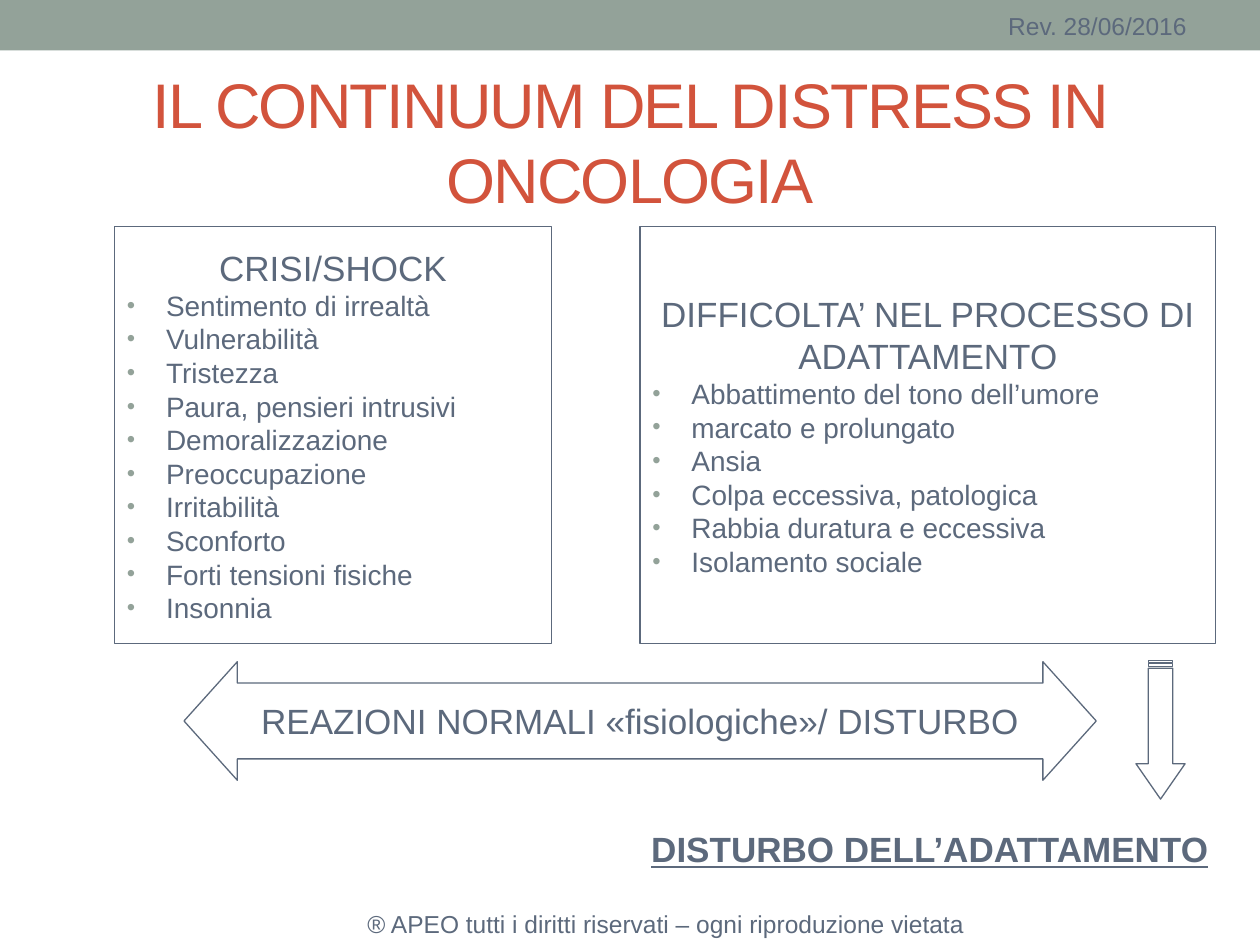
from lxml.etree import SubElement
from pptx import Presentation
from pptx.dml.color import RGBColor
from pptx.enum.shapes import MSO_SHAPE
from pptx.enum.text import MSO_ANCHOR, MSO_AUTO_SIZE, PP_ALIGN
from pptx.oxml.ns import qn
from pptx.util import Cm, Pt

SLATE = RGBColor(0x5C, 0x69, 0x7C)
SAGE = RGBColor(0x93, 0xA2, 0x99)
RED = RGBColor(0xD2, 0x53, 0x3C)


def write_paragraph(paragraph, text, size, color=SLATE, align=PP_ALIGN.CENTER, **extra):
    paragraph.alignment = align
    run = paragraph.add_run()
    run.text = text
    run.font.color.rgb = color
    for name, value in {"name": "Arial", "size": Pt(size), **extra}.items():
        setattr(run.font, name, value)
    return run


def add_outline(kind, left, top, width, height):
    shape = slide.shapes.add_shape(kind, Cm(left), Cm(top), Cm(width), Cm(height))
    shape.shadow.inherit = False
    shape.fill.background()
    shape.line.color.rgb = SLATE
    shape.line.width = Pt(0.75)
    shape.text_frame.vertical_anchor = MSO_ANCHOR.MIDDLE
    return shape


presentation = Presentation()
presentation.slide_width = Cm(25.4)
presentation.slide_height = Cm(19.05)
slide = presentation.slides.add_slide(presentation.slide_layouts[5])

band = slide.shapes.add_shape(MSO_SHAPE.RECTANGLE, Cm(0), Cm(0), Cm(25.4), Cm(1.02))
band.shadow.inherit = False
band.fill.solid()
band.fill.fore_color.rgb = SAGE
band.line.fill.background()

title = slide.shapes.title
title_place = {"left": Cm(1.27), "top": Cm(1.47), "width": Cm(22.86), "height": Cm(2.74)}
for name, value in title_place.items():
    setattr(title, name, value)
title.text_frame.auto_size = MSO_AUTO_SIZE.NONE
title.text_frame.vertical_anchor = MSO_ANCHOR.MIDDLE
run = write_paragraph(title.text_frame.paragraphs[0],
                      "IL CONTINUUM DEL DISTRESS IN ONCOLOGIA", 36, RED)
run.font._element.set("spc", "-100")

captions = [
    ("® APEO tutti i diritti riservati – ogni riproduzione vietata",
     6.48, 18.19, 13.89, 0.86, 14, {}),
    ("Rev. 28/06/2016", 18.85, 0.08, 6.55, 0.86, 14, {}),
    ("DISTURBO DELL’ADATTAMENTO", 11.94, 16.41, 13.61, 1.4, 20,
     {"bold": True, "underline": True}),
]
for text, left, top, width, height, size, extra in captions:
    caption = slide.shapes.add_textbox(Cm(left), Cm(top), Cm(width), Cm(height))
    caption.text_frame.word_wrap = True
    caption.text_frame.vertical_anchor = MSO_ANCHOR.MIDDLE
    write_paragraph(caption.text_frame.paragraphs[0], text, size, **extra)

stages = [
    (2.31, 8.81, ["CRISI/SHOCK"],
     ["Sentimento di irrealtà", "Vulnerabilità", "Tristezza", "Paura, pensieri intrusivi",
      "Demoralizzazione", "Preoccupazione", "Irritabilità", "Sconforto",
      "Forti tensioni fisiche", "Insonnia"]),
    (12.9, 11.61, ["DIFFICOLTA’ NEL PROCESSO DI", "ADATTAMENTO"],
     ["Abbattimento del tono dell’umore", "marcato e prolungato", "Ansia",
      "Colpa eccessiva, patologica", "Rabbia duratura e eccessiva", "Isolamento sociale"]),
]
for left, width, headings, symptoms in stages:
    frame = add_outline(MSO_SHAPE.RECTANGLE, left, 4.57, width, 8.41).text_frame
    frame.word_wrap = True
    for index, text in enumerate(headings + symptoms):
        paragraph = frame.add_paragraph() if index else frame.paragraphs[0]
        if index < len(headings):
            write_paragraph(paragraph, text, 20)
            continue
        properties = paragraph._p.get_or_add_pPr()
        properties.set("marL", str(Cm(0.79)))
        properties.set("indent", str(-Cm(0.79)))
        bullet_color = SubElement(properties, qn("a:buClr"))
        SubElement(bullet_color, qn("a:srgbClr"), val=str(SAGE))
        SubElement(properties, qn("a:buSzPct"), val="85000")
        SubElement(properties, qn("a:buFont"), typeface="Arial")
        SubElement(properties, qn("a:buChar"), char="•")
        write_paragraph(paragraph, text, 16, align=PP_ALIGN.LEFT)

continuum = add_outline(MSO_SHAPE.LEFT_RIGHT_ARROW, 3.71, 13.34, 18.39, 2.39)
continuum.adjustments[0] = 0.64
continuum.adjustments[1] = 0.45
write_paragraph(continuum.text_frame.paragraphs[0],
                "REAZIONI NORMALI «fisiologiche»/ DISTURBO", 20)

outcome = add_outline(MSO_SHAPE.STRIPED_RIGHT_ARROW, 22, 14.22, 2.79, 0.99)
outcome.rotation = 90
outcome.adjustments[0] = 0.5
outcome.adjustments[1] = 0.72

presentation.save("out.pptx")
